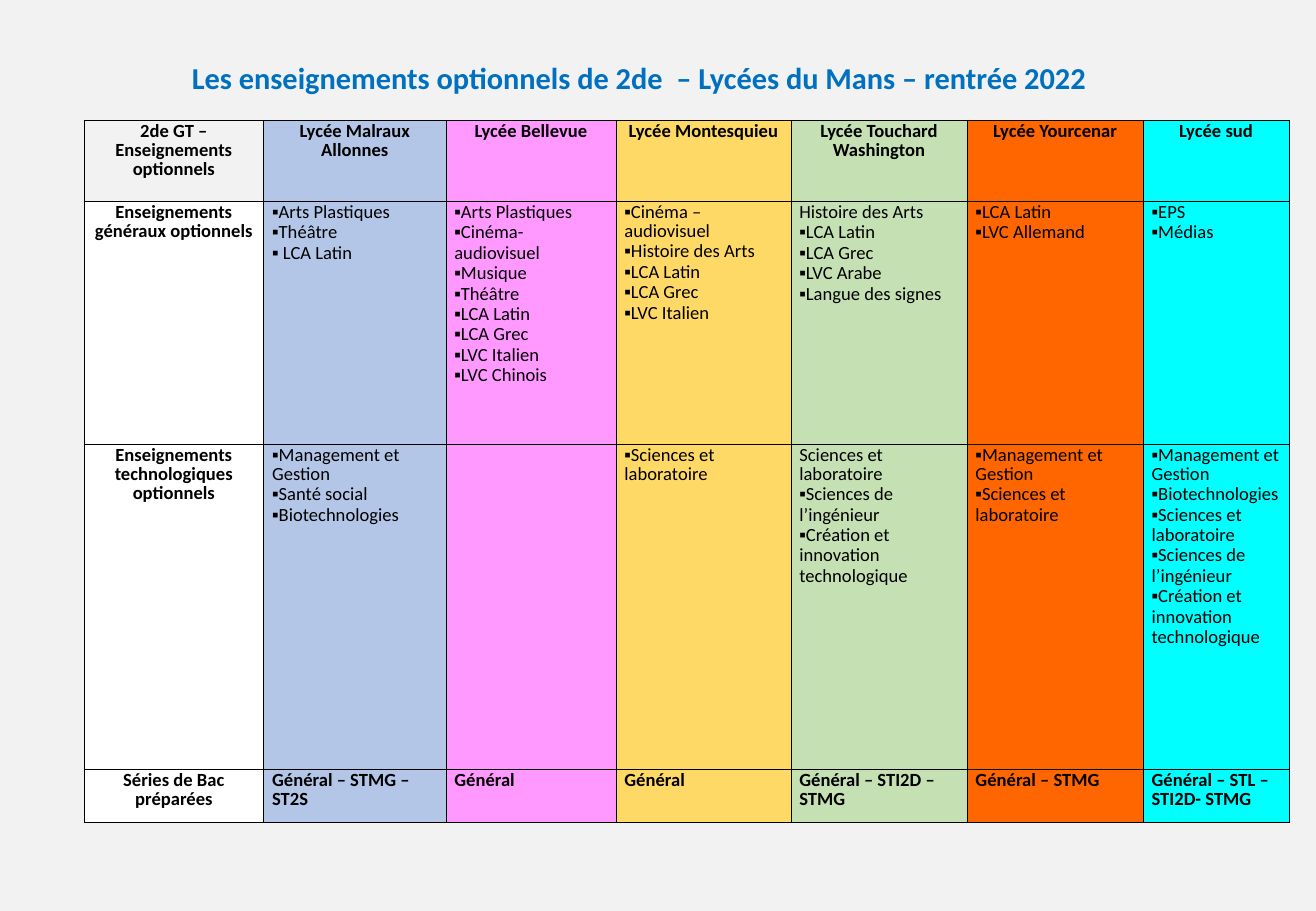
from pptx import Presentation
from pptx.dml.color import RGBColor
from pptx.enum.text import MSO_ANCHOR, MSO_AUTO_SIZE, PP_ALIGN
from pptx.oxml import parse_xml
from pptx.oxml.ns import nsdecls
from pptx.util import Pt

LEFT, CENTER = PP_ALIGN.LEFT, PP_ALIGN.CENTER
TOP = MSO_ANCHOR.TOP
NO_FIT = MSO_AUTO_SIZE.NONE
TITLE_ONLY = 5

FONT = "Calibri"
BLACK = RGBColor(0x00, 0x00, 0x00)
WHITE = RGBColor(0xFF, 0xFF, 0xFF)
GREY = RGBColor(0xF2, 0xF2, 0xF2)
BLUE = RGBColor(0x00, 0x70, 0xC0)
SKY = RGBColor(0xB4, 0xC6, 0xE7)
PINK = RGBColor(0xFF, 0x99, 0xFF)
GOLD = RGBColor(0xFF, 0xD9, 0x66)
GREEN = RGBColor(0xC5, 0xE0, 0xB3)
ORANGE = RGBColor(0xFF, 0x66, 0x00)
CYAN = RGBColor(0x00, 0xFF, 0xFF)

TITLE = "Les enseignements optionnels de 2de  – Lycées du Mans – rentrée 2022"
LABELS = [
    "2de GT – Enseignements optionnels",
    "Enseignements généraux optionnels",
    "Enseignements technologiques optionnels",
    "Séries de Bac préparées",
]

# Each school: colour, name, general options, technical options, series
SCHOOLS = [
    (SKY, "Lycée Malraux Allonnes",
     ["▪Arts Plastiques", "▪Théâtre", "▪ LCA Latin"],
     ["▪Management et Gestion", "▪Santé social", "▪Biotechnologies"],
     "Général – STMG – ST2S"),
    (PINK, "Lycée Bellevue",
     ["▪Arts Plastiques", "▪Cinéma-audiovisuel", "▪Musique", "▪Théâtre",
      "▪LCA Latin", "▪LCA Grec", "▪LVC Italien", "▪LVC Chinois"],
     [],
     "Général"),
    (GOLD, "Lycée Montesquieu",
     ["▪Cinéma – audiovisuel", "▪Histoire des Arts", "▪LCA Latin",
      "▪LCA Grec", "▪LVC Italien"],
     ["▪Sciences et laboratoire"],
     "Général"),
    (GREEN, "Lycée Touchard Washington",
     ["Histoire des Arts", "▪LCA Latin", "▪LCA Grec", "▪LVC Arabe",
      "▪Langue des signes"],
     ["Sciences et laboratoire", "▪Sciences de l’ingénieur",
      "▪Création et innovation technologique"],
     "Général – STI2D – STMG"),
    (ORANGE, "Lycée Yourcenar",
     ["▪LCA Latin", "▪LVC Allemand"],
     ["▪Management et Gestion", "▪Sciences et laboratoire"],
     "Général – STMG"),
    (CYAN, "Lycée sud",
     ["▪EPS", "▪Médias"],
     ["▪Management et Gestion", "▪Biotechnologies",
      "▪Sciences et laboratoire", "▪Sciences de l’ingénieur",
      "▪Création et innovation technologique"],
     "Général – STL – STI2D- STMG"),
]

WIDTHS = [106.5, 108, 100.8, 103.7, 104.4, 104.4, 86.4]
HEIGHTS = [48, 144, 192.5, 31.7]


def write(frame, lines, size=11, color=BLACK, bold=False, align=LEFT,
          first=0.83, rest=0.89):
    """Put one paragraph per line in the frame."""
    for i, line in enumerate(lines):
        para = frame.paragraphs[0] if i == 0 else frame.add_paragraph()
        para.alignment = align
        para.line_spacing = rest if i else first
        run = para.add_run()
        run.text = line
        font = run.font
        font.name, font.size, font.bold = FONT, Pt(size), bold
        font.color.rgb = color


def add_title(slide):
    title = slide.shapes.title
    title.left, title.top = Pt(106.5), Pt(31.7)
    title.width, title.height = Pt(623.5), Pt(29.5)
    frame = title.text_frame
    frame.word_wrap = True
    frame.auto_size = NO_FIT
    frame.vertical_anchor = TOP
    write(frame, [TITLE], size=18, color=BLUE, bold=True, first=1.0)


def add_edges(cell):
    """Draw thin black borders on all four sides."""
    props = cell._tc.get_or_add_tcPr()
    for i, side in enumerate("LRTB"):
        props.insert(i, parse_xml(
            f'<a:ln{side} {nsdecls("a")} w="{Pt(0.45)}"><a:solidFill>'
            f'<a:srgbClr val="{BLACK}"/></a:solidFill></a:ln{side}>'))


def fill_cell(cell, lines, color, **style):
    cell.margin_left = cell.margin_right = Pt(5)
    cell.margin_top, cell.margin_bottom = Pt(1.4), Pt(0)
    cell.vertical_anchor = TOP
    if color is None:
        cell.fill.background()
    else:
        cell.fill.solid()
        cell.fill.fore_color.rgb = color
    add_edges(cell)
    write(cell.text_frame, lines, **style)


def add_grid(slide):
    table = slide.shapes.add_table(
        len(HEIGHTS), len(WIDTHS), Pt(49.8), Pt(71.3),
        Pt(sum(WIDTHS)), Pt(sum(HEIGHTS))).table
    table.first_row = table.horz_banding = False
    for col, width in zip(table.columns, WIDTHS):
        col.width = Pt(width)
    for row, height in zip(table.rows, HEIGHTS):
        row.height = Pt(height)

    # Row labels
    for r, label in enumerate(LABELS):
        fill_cell(table.cell(r, 0), [label], WHITE if r else None,
                  bold=True, align=CENTER)

    # One column per school
    for c, (color, name, general, tech, series) in enumerate(SCHOOLS, 1):
        fill_cell(table.cell(0, c), [name], color, bold=True, align=CENTER)
        fill_cell(table.cell(1, c), general, color)
        fill_cell(table.cell(2, c), tech, color)
        fill_cell(table.cell(3, c), [series], color, bold=True)


def main():
    deck = Presentation()
    deck.slide_width, deck.slide_height = Pt(780), Pt(540)
    slide = deck.slides.add_slide(deck.slide_layouts[TITLE_ONLY])
    back = slide.background.fill
    back.solid()
    back.fore_color.rgb = GREY
    add_title(slide)
    add_grid(slide)
    deck.save("out.pptx")


if __name__ == "__main__":
    main()
